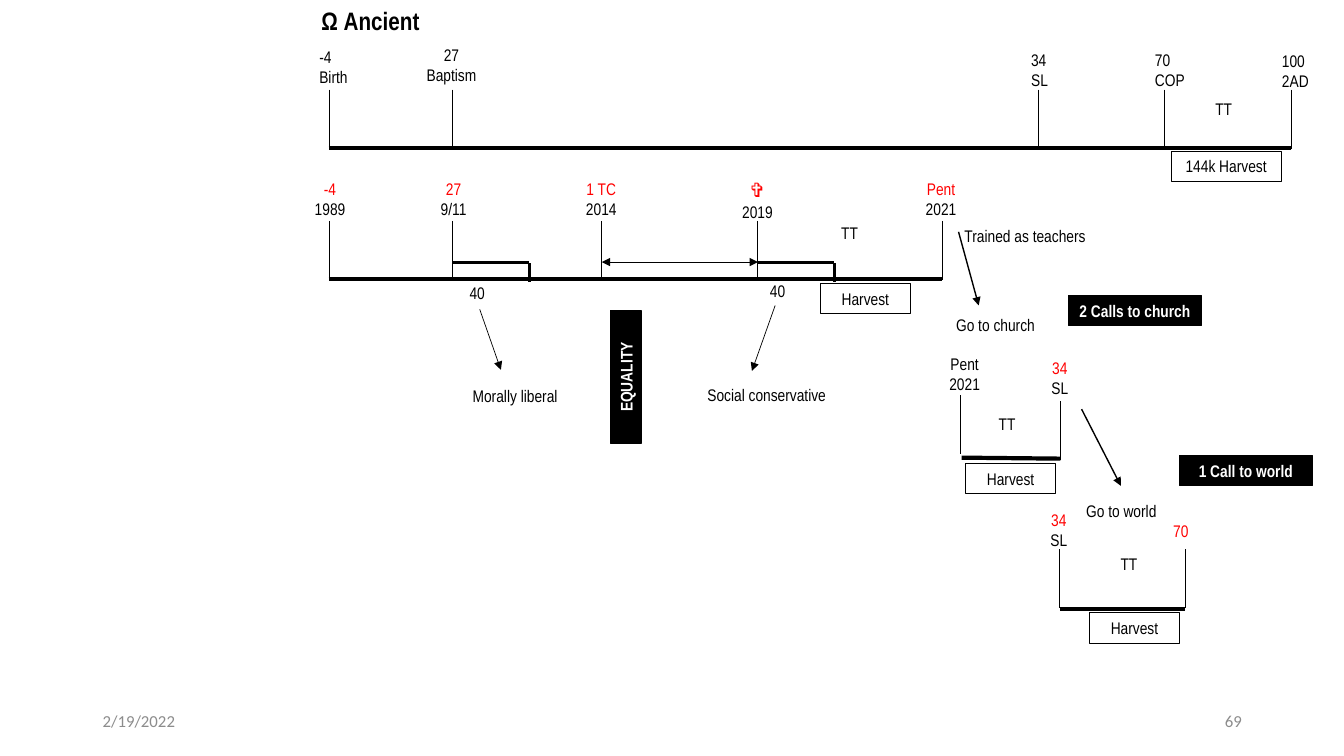
"""Build the "Ω Ancient" slide: four linked timelines with labels, brackets and arrows."""
from lxml import etree
from pptx import Presentation
from pptx.dml.color import RGBColor
from pptx.enum.shapes import MSO_CONNECTOR, MSO_SHAPE
from pptx.enum.text import MSO_ANCHOR, PP_ALIGN
from pptx.oxml.ns import qn
from pptx.util import Pt

LEFT, CENTER, RIGHT = PP_ALIGN.LEFT, PP_ALIGN.CENTER, PP_ALIGN.RIGHT
MIDDLE = MSO_ANCHOR.MIDDLE
RECT, STRAIGHT = MSO_SHAPE.RECTANGLE, MSO_CONNECTOR.STRAIGHT
BLACK, RED, WHITE, GREY = "000000", "FF0000", "FFFFFF", "8C8C8C"
ROW, PAIR = 21.6, 36

prs = Presentation()
prs.slide_width, prs.slide_height = Pt(960), Pt(540)
s = prs.slides.add_slide(prs.slide_layouts[6])


def draw_line(x1, y1, x2, y2, width, ends=()):
    c = s.shapes.add_connector(STRAIGHT, Pt(x1), Pt(y1), Pt(x2), Pt(y2))
    c.line.color.rgb = RGBColor.from_string(BLACK)
    c.line.width = Pt(width)
    ln = c.line._get_or_add_ln()
    for end in ends:
        etree.SubElement(ln, qn(f"a:{end}"), type="triangle")
    etree.SubElement(c._element.spPr, qn("a:effectLst"))


def write(sp, lines, align=CENTER, wrap=True, **font):
    tf = sp.text_frame
    tf.word_wrap = wrap
    for i, (text, color, changes) in enumerate(lines):
        p = tf.paragraphs[0] if i == 0 else tf.add_paragraph()
        p.alignment = align
        r = p.add_run()
        r.text = text
        r.font.color.rgb = RGBColor.from_string(color)
        values = {"name": "Arial Narrow", "size": Pt(12), "bold": False, **font, **changes}
        for key, value in values.items():
            setattr(r.font, key, value)


timelines = [
    ((234.7, 105.8, 922.3, 105.8), 64.1, [235.4, 323.3, 741.6, 831.6, 922.3]),
    ((234.7, 199.4, 673.2, 199.4), 157.7, [235.4, 323.3, 429.8, 541.4, 673.2]),
    ((686.9, 326.9, 757.4, 327.6), 282.2, [686.2]),
    ((757.4, 434.9, 846.7, 434.9), 392.4, [756.7, 846.7]),
]
for axis, top, ticks in timelines:
    draw_line(*axis, 3)
    for x in ticks:
        draw_line(x, top, x, top + 42, 0.75)
draw_line(757.4, 286.6, 757.4, 328.3, 0.75)

for x in (323.3, 541.1):
    draw_line(x, 187.2, x + 54.7, 187.2, 2.25)
    draw_line(x + 54.7, 187.9, x + 54.7, 201.6, 2.25)

arrows = [
    (684.7, 165.6, 699.1, 218.2, 1),
    (772.6, 292.3, 800.6, 347, 1),
    (342.7, 221, 357.8, 264.2, 0.5),
    (553.7, 218.2, 537.1, 265, 0.5),
]
for arrow in arrows:
    draw_line(*arrow, ["tailEnd"])
draw_line(429.8, 187.2, 541.4, 187.2, 0.5, ["headEnd", "tailEnd"])

dates = [
    (221, 29.5, 54, "-4", BLACK, "Birth", LEFT),
    (296.6, 28.1, 51.8, "27", BLACK, "Baptism", CENTER),
    (729.4, 31.7, 35.3, "34", BLACK, "SL", LEFT),
    (817.9, 31.7, 40.3, "70", BLACK, "COP", LEFT),
    (908.6, 32.4, 35.3, "100", BLACK, "2AD", LEFT),
    (217.4, 123.8, 36.7, "-4", RED, "1989", CENTER),
    (298.1, 123.8, 51.8, "27", RED, "9/11", CENTER),
    (411.1, 123.8, 36.7, "1 TC", RED, "2014", CENTER),
    (522.7, 123.8, 36.7, "✞", RED, "2019", CENTER),
    (653.8, 123.8, 36.7, "Pent", RED, "2021", CENTER),
    (666.7, 249.1, 44.6, "Pent", BLACK, "2021", CENTER),
    (738.7, 252, 36.7, "34", RED, "SL", CENTER),
    (738, 360.7, 36.7, "34", RED, "SL", CENTER),
]
for x, y, w, first, color, second, align in dates:
    sp = s.shapes.add_textbox(Pt(x), Pt(y), Pt(w), Pt(PAIR))
    changes = {"size": Pt(14), "bold": True} if first == "✞" else {}
    write(sp, [(first, color, changes), (second, BLACK, {})], align)

notes = [
    (581, 155.5, 51.8, "TT", BLACK, CENTER, True),
    (848.2, 67, 51.8, "TT", BLACK, CENTER, True),
    (693.4, 292.3, 51.8, "TT", BLACK, CENTER, True),
    (780.5, 391.7, 51.8, "TT", BLACK, CENTER, True),
    (825.1, 368.6, 36.7, "70", RED, CENTER, True),
    (680.4, 157.7, 103.7, "Trained as teachers", BLACK, CENTER, True),
    (675.4, 221, 71.3, "Go to church", BLACK, CENTER, False),
    (768.2, 354.2, 65.5, "Go to world", BLACK, CENTER, False),
    (328.3, 198.7, 29.5, "40", BLACK, LEFT, True),
    (542.9, 197.3, 29.5, "40", BLACK, LEFT, True),
    (330.5, 272.2, 99.4, "Morally liberal", BLACK, LEFT, True),
    (498.2, 271.4, 141.1, "Social conservative", BLACK, LEFT, True),
]
for x, y, w, text, color, align, wrap in notes:
    sp = s.shapes.add_textbox(Pt(x), Pt(y), Pt(w), Pt(ROW))
    write(sp, [(text, color, {})], align, wrap)

boxes = [
    (836.6, 108, 78.5, "144k Harvest", False, 0),
    (586.1, 202.3, 64.1, "Harvest", False, 0),
    (689.8, 331.2, 64.1, "Harvest", False, 0),
    (778.3, 437.8, 64.1, "Harvest", False, 0),
    (763.2, 211, 95, "2 Calls to church", True, 0),
    (842.4, 325.4, 95, "1 Call to world", True, 0),
    (399.6, 258.5, 95, "EQUALITY", True, 270),
]
for x, y, w, text, solid, angle in boxes:
    sp = s.shapes.add_shape(RECT, Pt(x), Pt(y), Pt(w), Pt(ROW))
    sp.shadow.inherit = False
    sp.rotation = angle
    sp.line.color.rgb = RGBColor.from_string(BLACK)
    sp.line.width = Pt(0.75)
    if solid:
        sp.fill.solid()
        sp.fill.fore_color.rgb = RGBColor.from_string(BLACK)
    else:
        sp.fill.background()
    write(sp, [(text, WHITE if solid else BLACK, {})], bold=solid)

title = s.shapes.add_textbox(Pt(222.5), Pt(0), Pt(128.2), Pt(28.8))
write(title, [("Ω Ancient", BLACK, {})], LEFT, size=Pt(18), bold=True)

for x, text, align in [(66.2, "2/19/2022", LEFT), (678.2, "69", RIGHT)]:
    sp = s.shapes.add_textbox(Pt(x), Pt(500.4), Pt(216), Pt(28.8))
    sp.text_frame.vertical_anchor = MIDDLE
    write(sp, [(text, GREY, {})], align, name="Calibri")

prs.save("out.pptx")
